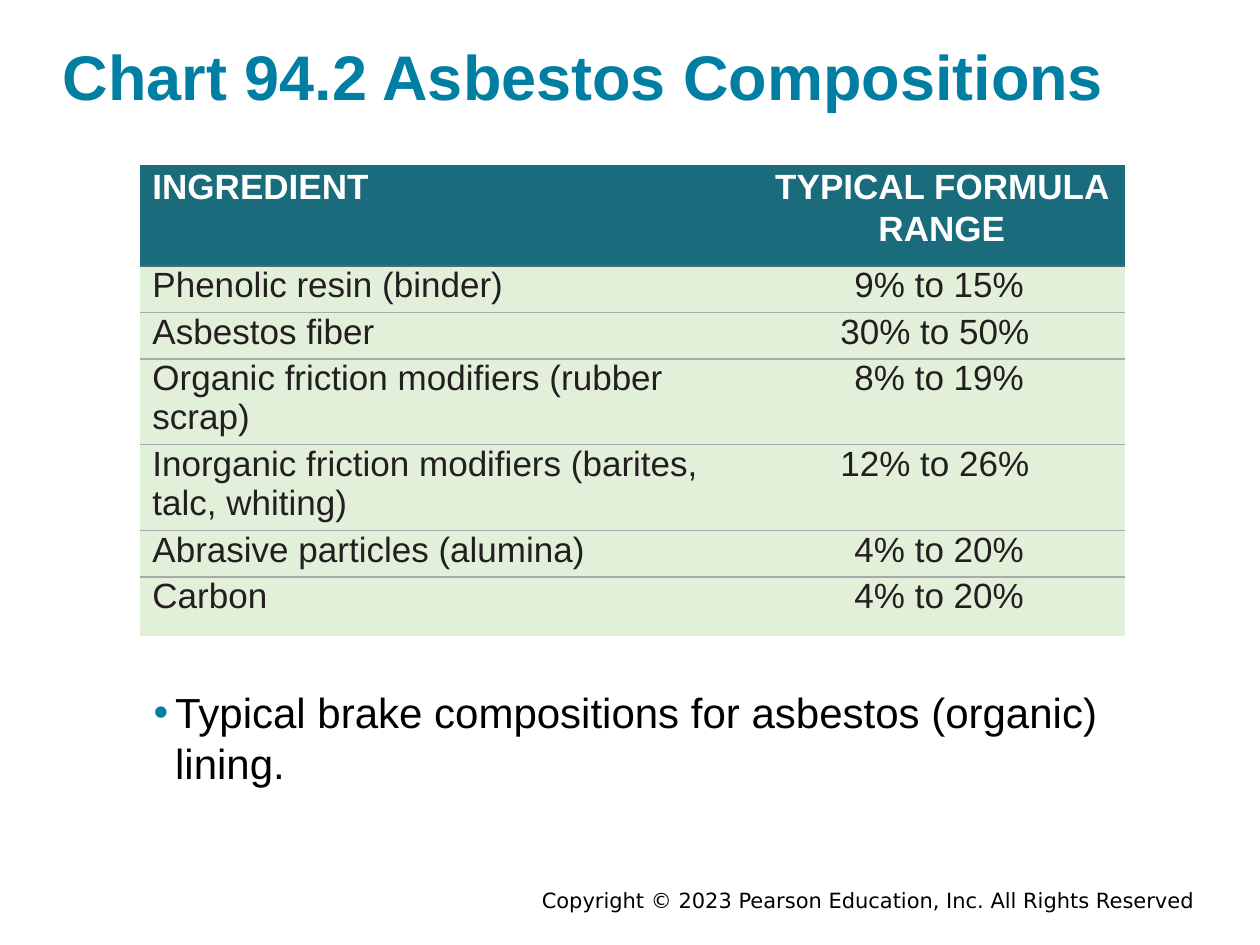
from lxml import etree
from pptx import Presentation
from pptx.dml.color import RGBColor
from pptx.enum.text import MSO_ANCHOR, PP_ALIGN
from pptx.oxml.ns import qn
from pptx.util import Inches, Pt

LEFT, CENTER, RIGHT = PP_ALIGN.LEFT, PP_ALIGN.CENTER, PP_ALIGN.RIGHT
TOP, MIDDLE = MSO_ANCHOR.TOP, MSO_ANCHOR.MIDDLE
TEAL = RGBColor(0x00, 0x7F, 0xA3)
HEADER = RGBColor(0x1A, 0x6C, 0x7C)
HEADER_RULE = RGBColor(0x4F, 0x6B, 0x79)
RULE = RGBColor(0xA7, 0xA9, 0xAC)
GREEN = RGBColor(0xE2, 0xEF, 0xD9)
INK = RGBColor(0x23, 0x1F, 0x20)
BLACK = RGBColor(0x00, 0x00, 0x00)
WHITE = RGBColor(0xFF, 0xFF, 0xFF)

COLUMNS, ROWS = 100, 75
INGREDIENTS = [
    ("INGREDIENT", "TYPICAL FORMULA RANGE"),
    ("Phenolic resin (binder)", "9% to 15%"),
    ("Asbestos fiber", "30% to 50%"),
    ("Organic friction modifiers (rubber scrap)", "8% to 19%"),
    ("Inorganic friction modifiers (barites, talc, whiting)", "12% to 26%"),
    ("Abrasive particles (alumina)", "4% to 20%"),
    ("Carbon", "4% to 20%"),
]


def write(tf, text, size=20, color=BLACK, bold=False, font="Arial",
          align=LEFT, spacing=1.0, bullet=None):
    p = tf.paragraphs[0]
    p.alignment, p.line_spacing = align, spacing
    if bullet:
        pPr = p._p.get_or_add_pPr()
        pPr.set("marL", str(Inches(0.28)))
        pPr.set("indent", str(Inches(-0.17)))
        clr = etree.SubElement(pPr, qn("a:buClr"))
        etree.SubElement(clr, qn("a:srgbClr"), val=str(bullet))
        etree.SubElement(pPr, qn("a:buFont"), typeface="Arial")
        etree.SubElement(pPr, qn("a:buChar"), char="•")
    r = p.add_run()
    r.text = text
    r.font.name, r.font.size, r.font.bold = font, Pt(size), bold
    r.font.color.rgb = color


def set_borders(cell, top, bottom):
    tcPr = cell._tc.get_or_add_tcPr()
    sides = (("a:lnL", None), ("a:lnR", None), ("a:lnT", top), ("a:lnB", bottom))
    for i, (tag, color) in enumerate(sides):
        ln = etree.Element(qn(tag), w=str(Pt(1)))
        if color is None:
            etree.SubElement(ln, qn("a:noFill"))
        else:
            fill = etree.SubElement(ln, qn("a:solidFill"))
            etree.SubElement(fill, qn("a:srgbClr"), val=str(color))
        tcPr.insert(i, ln)


class Deck:
    """Holds the slide grid and draws each kind of element on the current slide."""

    def __init__(self):
        self.prs = Presentation()
        self.prs.slide_width, self.prs.slide_height = Inches(10), Inches(7.5)
        self.s = self.prs.slides.add_slide(self.prs.slide_layouts[6])

    def x(self, columns):
        return round(self.prs.slide_width * columns / COLUMNS)

    def y(self, rows):
        return round(self.prs.slide_height * rows / ROWS)

    def text(self, left, top, width, height, text, inset=0.0, anchor=TOP, **style):
        sp = self.s.shapes.add_textbox(self.x(left), self.y(top),
                                       self.x(width), self.y(height))
        tf = sp.text_frame
        tf.word_wrap, tf.vertical_anchor = True, anchor
        tf.margin_left = tf.margin_right = Inches(inset)
        write(tf, text, **style)

    def table(self, left, top, widths, heights, data):
        frame = self.s.shapes.add_table(len(heights), len(widths), self.x(left),
                                        self.y(top), self.x(sum(widths)),
                                        self.y(sum(heights)))
        table = frame.table
        table.first_row = table.horz_banding = False
        for column, width in zip(table.columns, widths):
            column.width = self.x(width)
        rules = [None, HEADER_RULE] + [RULE] * (len(data) - 2) + [None]
        for i, (row, height) in enumerate(zip(table.rows, heights)):
            row.height = self.y(height)
            for j, cell in enumerate(row.cells):
                self.cell(cell, data[i][j], i == 0, j == 1)
                set_borders(cell, rules[i], rules[i + 1])

    def cell(self, cell, text, header, centered):
        cell.margin_right = cell.margin_top = cell.margin_bottom = 0
        cell.margin_left = Inches(0.1)
        if centered and (header or text[1] != "%"):
            cell.margin_left = Inches(0.14 if header else 0.03)
        cell.fill.solid()
        cell.fill.fore_color.rgb = HEADER if header else GREEN
        write(cell.text_frame, text, color=WHITE if header else INK, bold=header,
              align=CENTER if centered else LEFT, spacing=1.07 if header else 1.0)


def main():
    deck = Deck()
    deck.text(17.5, 70.3, 78.3, 2.2,
              "Copyright © 2023 Pearson Education, Inc. All Rights Reserved",
              inset=0.1, anchor=MIDDLE, size=12, font="DejaVu Sans", align=RIGHT)
    deck.text(5, 2.5, 90, 7.1, "Chart 94.2 Asbestos Compositions",
              size=36, color=TEAL, bold=True)
    deck.table(11.1, 13.1, [47.7, 30.5], [8, 3.7, 3.7, 6.8, 6.8, 3.7, 4.7],
               INGREDIENTS)
    deck.text(11.1, 54, 76.8, 9.1,
              "Typical brake compositions for asbestos (organic) lining.",
              size=24, bullet=TEAL)
    deck.prs.save("out.pptx")


if __name__ == "__main__":
    main()
